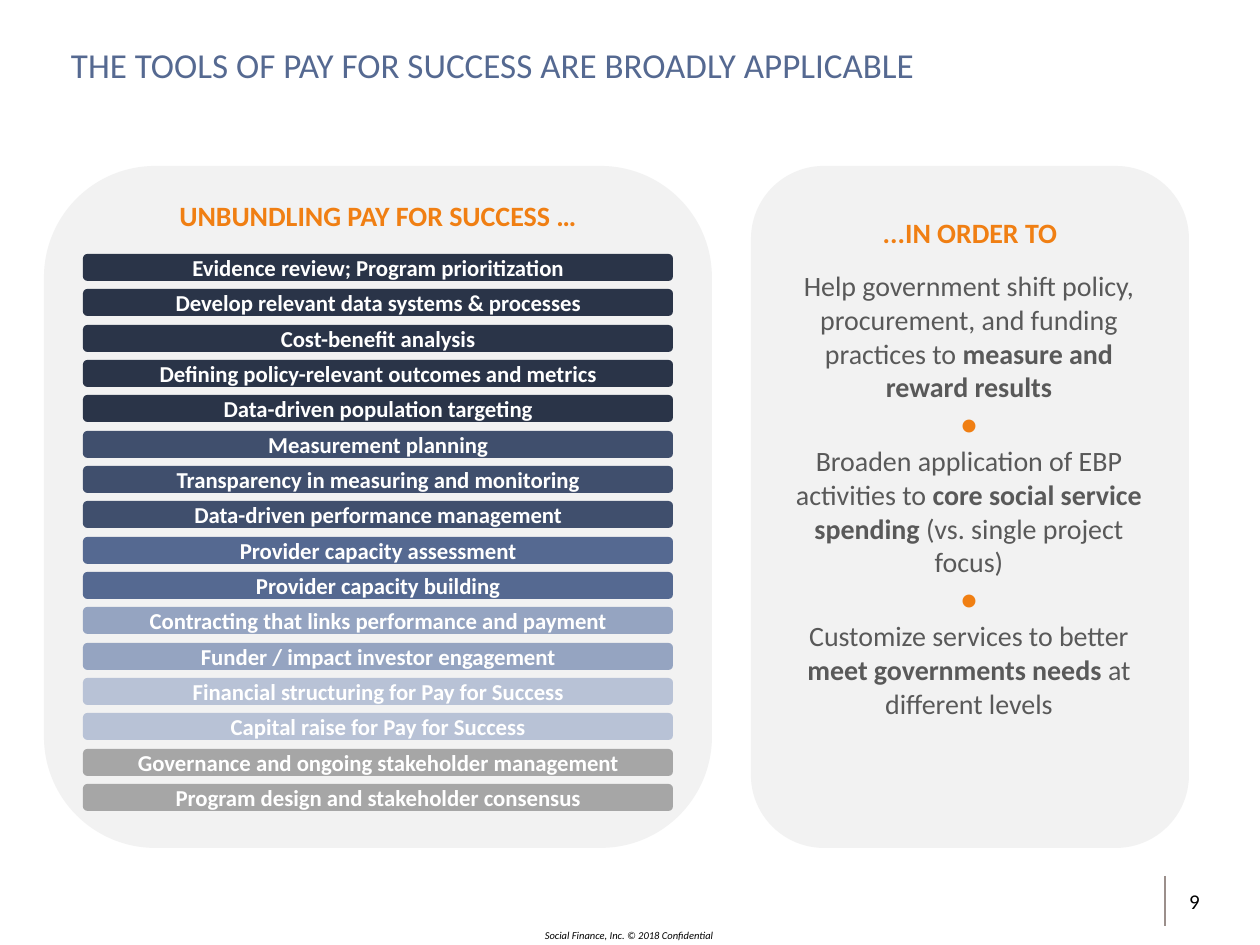
from lxml import etree
from pptx import Presentation
from pptx.dml.color import RGBColor
from pptx.enum.shapes import MSO_CONNECTOR, MSO_SHAPE
from pptx.enum.text import MSO_ANCHOR, PP_ALIGN
from pptx.oxml.ns import qn
from pptx.util import Emu, Pt

ROUNDED = MSO_SHAPE.ROUNDED_RECTANGLE
STRAIGHT = MSO_CONNECTOR.STRAIGHT
TOP, MIDDLE = MSO_ANCHOR.TOP, MSO_ANCHOR.MIDDLE
LEFT, CENTER = PP_ALIGN.LEFT, PP_ALIGN.CENTER

FONT = "Calibri"
BLUE, ORANGE, GRAY, PANEL = "556991", "F07F13", "595959", "F2F2F2"
BLACK, WHITE, RULE = "000000", "FFFFFF", "9B8F8B"

BAR_LEFT, BAR_WIDTH, BAR_HEIGHT = 83, 590, 27
FIRST_BAR_TOP, LAST_BAR_TOP = 254, 784
TOOL_GROUPS = [
    ("2A3448", ["Evidence review; Program prioritization",
                "Develop relevant data systems & processes",
                "Cost-benefit analysis",
                "Defining policy-relevant outcomes and metrics",
                "Data-driven population targeting"]),
    ("404F6D", ["Measurement planning",
                "Transparency in measuring and monitoring",
                "Data-driven performance management"]),
    (BLUE, ["Provider capacity assessment",
            "Provider capacity building"]),
    ("95A4C1", ["Contracting that links performance and payment",
                "Funder / impact investor engagement"]),
    ("B8C2D6", ["Financial structuring for Pay for Success",
                "Capital raise for Pay for Success"]),
    ("A6A6A6", ["Governance and ongoing stakeholder management",
                "Program design and stakeholder consensus"]),
]

# Each goal is a list of (text, bold) spans.
GOALS = [
    [("Help government shift policy, procurement, and funding practices to ", False),
     ("measure and reward results", True)],
    [("Broaden application of EBP activities to ", False),
     ("core social service spending ", True),
     ("(vs. single project focus)", False)],
    [("Customize services to better ", False),
     ("meet governments needs ", True),
     ("at different levels", False)],
]


def px(length):
    return Emu(round(length * 914400 / 126))


def rgb(value):
    return RGBColor.from_string(value)


def add_span(para, text, size=16, color=GRAY, bold=False, italic=False):
    span = para.add_run()
    span.text = text
    font = span.font
    font.name, font.size = FONT, Pt(size)
    font.bold, font.italic = bold, italic
    font.color.rgb = rgb(color)


def set_frame(shape, anchor=TOP, insets=(0, 0, 0, 0)):
    frame = shape.text_frame
    frame.word_wrap = True
    frame.vertical_anchor = anchor
    (frame.margin_left, frame.margin_top,
     frame.margin_right, frame.margin_bottom) = map(px, insets)
    return frame


def write(shape, text, align=CENTER, anchor=TOP, insets=(0, 0, 0, 0), **style):
    """Put one paragraph of uniformly styled text in a shape."""
    para = set_frame(shape, anchor, insets).paragraphs[0]
    para.alignment = align
    add_span(para, text, **style)


def add_box(page, left, top, width, height):
    return page.shapes.add_textbox(px(left), px(top), px(width), px(height))


def add_rounded(shapes, left, top, width, height, fill):
    shape = shapes.add_shape(ROUNDED, px(left), px(top), px(width), px(height))
    shape.shadow.inherit = False
    shape.fill.solid()
    shape.fill.fore_color.rgb = rgb(fill)
    shape.line.fill.background()
    return shape


def add_rule(page, x, top, bottom):
    rule = page.shapes.add_connector(STRAIGHT, px(x), px(top), px(x), px(bottom))
    rule.line.color.rgb = rgb(RULE)
    rule.line.width = Pt(0.75)
    etree.SubElement(rule._element.spPr, qn("a:effectLst"))


def add_tool_bars(page):
    bars = [(tool, fill) for fill, tools in TOOL_GROUPS for tool in tools]
    pitch = (LAST_BAR_TOP - FIRST_BAR_TOP) / (len(bars) - 1)
    group = page.shapes.add_group_shape()
    for index, (tool, fill) in enumerate(bars):
        top = round(FIRST_BAR_TOP + index * pitch)
        bar = add_rounded(group.shapes, BAR_LEFT, top, BAR_WIDTH, BAR_HEIGHT, fill)
        write(bar, tool, anchor=MIDDLE, size=13, color=WHITE, bold=True)


def add_goals(page):
    """Stack the goals in one box, parted by orange dots."""
    frame = set_frame(add_box(page, 782, 263, 374, 501), insets=(13, 6, 13, 6))
    for index, goal in enumerate(GOALS):
        if index:
            add_span(frame.add_paragraph(), "●", color=ORANGE)
        para = frame.add_paragraph() if index else frame.paragraphs[0]
        for text, bold in goal:
            add_span(para, text, bold=bold)
    for para in frame.paragraphs:
        para.alignment = CENTER
        para.space_after = Pt(2)


def add_footer(page):
    write(add_box(page, 1176, 876, 84, 50), "9", align=LEFT, anchor=MIDDLE,
          insets=(13, 0, 0, 0), size=12, color=BLACK)
    add_rule(page, 1165, 876, 926)
    write(add_box(page, 515, 929, 228, 14), "Social Finance, Inc. © 2018 Confidential",
          size=6, color=BLACK, italic=True)


def main():
    deck = Presentation()
    deck.slide_width, deck.slide_height = px(1260), px(945)
    page = deck.slides.add_slide(deck.slide_layouts[6])

    add_footer(page)
    write(add_box(page, 71, 42, 1115, 45),
          "THE TOOLS OF PAY FOR SUCCESS ARE BROADLY APPLICABLE",
          align=LEFT, anchor=MIDDLE, size=20, color=BLUE)

    tools_panel = add_rounded(page.shapes, 44, 166, 668, 682, PANEL)
    write(tools_panel, "UNBUNDLING PAY FOR SUCCESS …", insets=(13, 0, 13, 6),
          color=ORANGE, bold=True)
    add_tool_bars(page)

    goals_panel = add_rounded(page.shapes, 751, 166, 438, 682, PANEL)
    write(goals_panel, "...IN ORDER TO", insets=(13, 28, 13, 6),
          color=ORANGE, bold=True)
    add_goals(page)

    deck.save("out.pptx")


if __name__ == "__main__":
    main()
